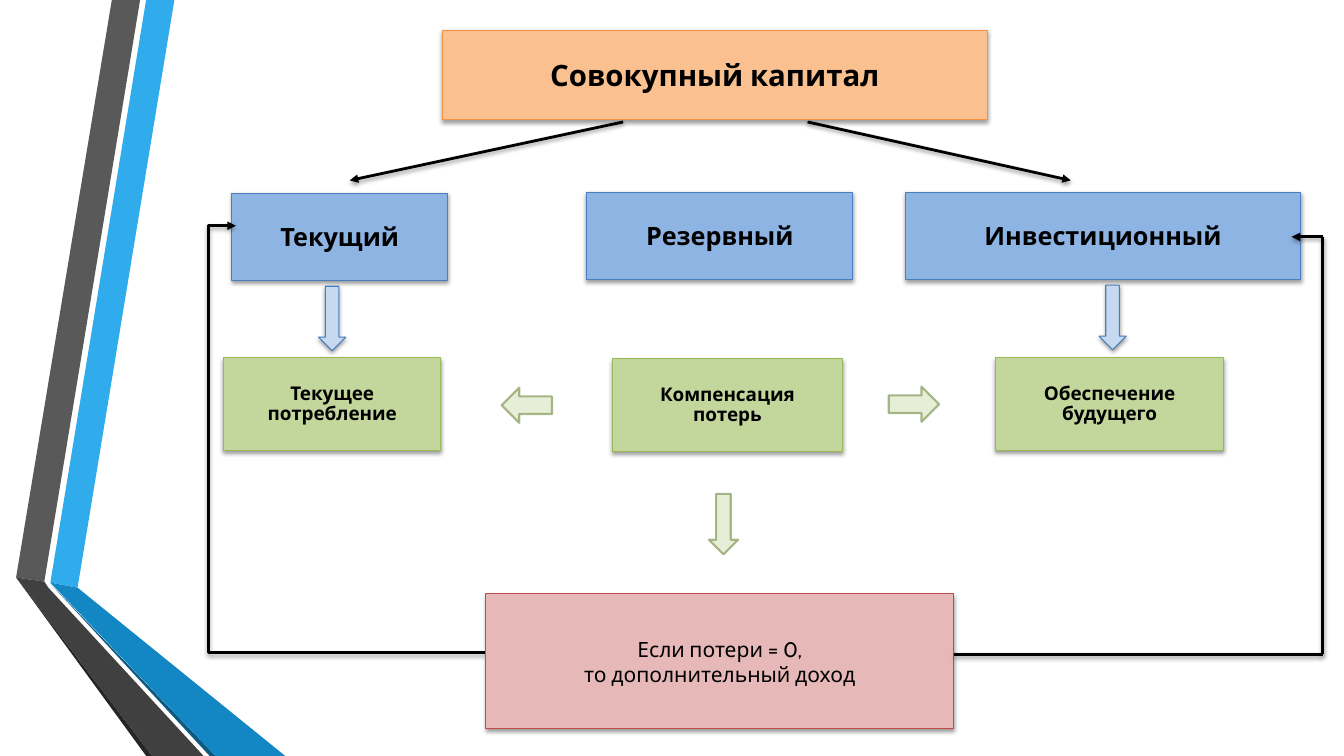
import pptx
import pptx.util
import pptx.dml.color
import pptx.enum.shapes
import pptx.enum.text
import pptx.oxml
import pptx.oxml.ns

Inches = pptx.util.Inches
Pt = pptx.util.Pt
RGBColor = pptx.dml.color.RGBColor
SHAPE = pptx.enum.shapes.MSO_SHAPE
CONNECTOR = pptx.enum.shapes.MSO_CONNECTOR
qn = pptx.oxml.ns.qn

FONT = "Cabin"
BLACK = RGBColor(0, 0, 0)
SKY = RGBColor(0x30, 0xAC, 0xEC)
SKY_FOLD = RGBColor(0x12, 0x87, 0xC3)
SKY_EDGE = RGBColor(0x0C, 0x5A, 0x82)
GREY = RGBColor(0x59, 0x59, 0x59)
GREY_FOLD = RGBColor(0x40, 0x40, 0x40)
GREY_EDGE = RGBColor(0x26, 0x26, 0x26)
ORANGE, ORANGE_LINE = RGBColor(0xFA, 0xC0, 0x90), RGBColor(0xF6, 0x92, 0x40)
BLUE, BLUE_LINE = RGBColor(0x8E, 0xB4, 0xE3), RGBColor(0x4B, 0x7E, 0xBC)
GREEN, GREEN_LINE = RGBColor(0xC3, 0xD6, 0x9B), RGBColor(0x98, 0xB9, 0x55)
PINK, PINK_LINE = RGBColor(0xE6, 0xB9, 0xB8), RGBColor(0xBF, 0x4C, 0x48)
PALE_BLUE = RGBColor(0xC6, 0xD9, 0xF1)
PALE_GREEN, OLIVE = RGBColor(0xD7, 0xE4, 0xBD), RGBColor(0x73, 0x8A, 0x42)


def add_child(parent, tag, **attributes):
    child = pptx.oxml.parse_xml(f"<{tag} {pptx.oxml.ns.nsdecls('a')}/>")
    for key, value in attributes.items():
        child.set(key, str(value))
    parent.append(child)
    return child


def cast_shadow(shape):
    properties = shape._element.spPr
    effects = properties.find(qn("a:effectLst"))
    if effects is None:
        effects = add_child(properties, "a:effectLst")
    shadow = add_child(effects, "a:outerShdw", blurRad=Pt(3.1), dist=Pt(1.6),
                       dir=5400000, rotWithShape=0)
    add_child(add_child(shadow, "a:srgbClr", val="000000"), "a:alpha", val=38000)


def add_block(slide, kind, box, fill, line, line_width=0.75):
    block = slide.shapes.add_shape(kind, *map(Inches, box))
    block.shadow.inherit = False
    block.fill.solid()
    block.fill.fore_color.rgb = fill
    block.line.color.rgb = line
    block.line.width = Pt(line_width)
    return block


def add_label(slide, box, lines, fill, line, size, bold=True, spacing=1.0):
    label = add_block(slide, SHAPE.RECTANGLE, box, fill, line)
    cast_shadow(label)
    frame = label.text_frame
    frame.word_wrap = False
    frame.vertical_anchor = pptx.enum.text.MSO_ANCHOR.MIDDLE
    frame.margin_left = frame.margin_right = Inches(0.04)
    frame.margin_top = frame.margin_bottom = Inches(0.03)
    for index, text in enumerate(lines):
        paragraph = frame.paragraphs[0] if index == 0 else frame.add_paragraph()
        paragraph.text = text
        paragraph.alignment = pptx.enum.text.PP_ALIGN.CENTER
        paragraph.line_spacing = spacing
        paragraph.font.name = FONT
        paragraph.font.size = Pt(size)
        paragraph.font.bold = bold
        paragraph.font.color.rgb = BLACK


def add_link(slide, start, end, arrow=True, kind=CONNECTOR.STRAIGHT):
    link = slide.shapes.add_connector(kind, *map(Inches, start + end))
    link.line.color.rgb = BLACK
    link.line.width = Pt(2)
    if arrow:
        add_child(link.line._get_or_add_ln(), "a:tailEnd", type="triangle")
    cast_shadow(link)
    return link


def add_pale_arrow(slide, box, rotation=0):
    arrow = add_block(slide, SHAPE.DOWN_ARROW, box, PALE_GREEN, OLIVE, 1.5)
    arrow.rotation = rotation
    for color in arrow._element.spPr.iter(qn("a:srgbClr")):
        add_child(color, "a:alpha", val=60000)


def draw_ribbons(slide, left, top):
    """Folded ribbons along the left edge."""
    ribbons = [
        (SKY, [(0.34, 5.78), (0.61, 5.83), (1.57, 0), (1.29, 0)]),
        (GREY, [(1.23, 0), (0.95, 0), (0, 5.73), (0.28, 5.77)]),
        (GREY_EDGE, [(0, 5.73), (1.29, 7.5), (1.35, 7.5)]),
        (SKY_EDGE, [(0.34, 5.79), (1.92, 7.5), (1.98, 7.5)]),
        (SKY_FOLD, [(0.34, 5.78), (1.98, 7.5), (2.67, 7.5), (0.61, 5.83)]),
        (GREY_FOLD, [(1.86, 7.5), (0.32, 5.83), (0.28, 5.77), (0, 5.73), (1.35, 7.5)]),
    ]
    for color, corners in ribbons:
        points = [(Inches(left + x), Inches(top + y)) for x, y in corners]
        builder = slide.shapes.build_freeform(*points[0], scale=1.0)
        builder.add_line_segments(points[1:], close=True)
        ribbon = builder.convert_to_shape()
        ribbon.shadow.inherit = False
        ribbon.fill.solid()
        ribbon.fill.fore_color.rgb = color
        ribbon.line.fill.background()


def draw_total(slide, left, top, width, height):
    """Total capital with arrows to its outer parts."""
    below = top + height + 0.02
    for start, end in [(1.79, -0.92), (3.62, 6.23)]:
        add_link(slide, (left + start, below), (left + end, below + 0.58))
    add_label(slide, (left, top, width, height), ["Совокупный капитал"],
              ORANGE, ORANGE_LINE, 21)


def draw_parts(slide, left, top):
    """Row of three kinds of capital."""
    for x, y, width, text in [(0, 0.01, 2.14, "Текущий"),
                              (3.52, 0, 2.64, "Резервный"),
                              (6.68, 0, 3.92, "Инвестиционный")]:
        add_label(slide, (left + x, top + y, width, 0.86), [text],
                  BLUE, BLUE_LINE, 18)
    for x, y in [(0.86, 0.93), (8.6, 0.92)]:
        cast_shadow(add_block(slide, SHAPE.DOWN_ARROW,
                              (left + x, top + y, 0.27, 0.64), PALE_BLUE, BLUE_LINE))


def draw_purposes(slide, left, top):
    """Row of purposes with pale arrows from the middle one."""
    for x, y, width, lines in [(0, 0, 2.15, ["Текущее", "потребление"]),
                               (3.85, 0.01, 2.29, ["Компенсация", "потерь"]),
                               (7.65, 0, 2.27, ["Обеспечение", "будущего"])]:
        add_label(slide, (left + x, top + y, width, 0.92), lines,
                  GREEN, GREEN_LINE, 13.5, spacing=0.9)
    add_pale_arrow(slide, (left + 2.83, top + 0.22, 0.35, 0.5), 90)
    add_pale_arrow(slide, (left + 6.67, top + 0.21, 0.35, 0.5), 270)
    add_pale_arrow(slide, (left + 4.81, top + 1.35, 0.29, 0.6))


def draw_outcome(slide, left, top, width, height):
    """Extra income with links back to the outer parts."""
    back = add_link(slide, (left, top + 0.58), (left - 2.48, top - 3.65),
                    kind=CONNECTOR.ELBOW)
    adjustments = back._element.spPr.find(qn("a:prstGeom")).get_or_add_avLst()
    add_child(adjustments, "a:gd", name="adj1", fmla="val 110900")

    add_label(slide, (left, top, width, height),
              ["Если потери = 0,", "то дополнительный доход"],
              PINK, PINK_LINE, 15, bold=False)

    right, edge = left + width, left + 8.3
    low, high = top + 0.6, top - 3.54
    add_link(slide, (edge, low), (right, low), arrow=False)
    add_link(slide, (edge, high), (edge, low), arrow=False)
    add_link(slide, (edge, high), (edge - 0.31, high))


def main():
    deck = pptx.Presentation()
    deck.slide_width, deck.slide_height = Inches(13.33), Inches(7.5)
    slide = deck.slides.add_slide(deck.slide_layouts[6])
    draw_ribbons(slide, 0.16, 0)
    draw_total(slide, 4.39, 0.3, 5.4, 0.89)
    draw_parts(slide, 2.3, 1.91)
    draw_purposes(slide, 2.22, 3.55)
    draw_outcome(slide, 4.82, 5.89, 4.64, 1.34)
    deck.save("out.pptx")


if __name__ == "__main__":
    main()
